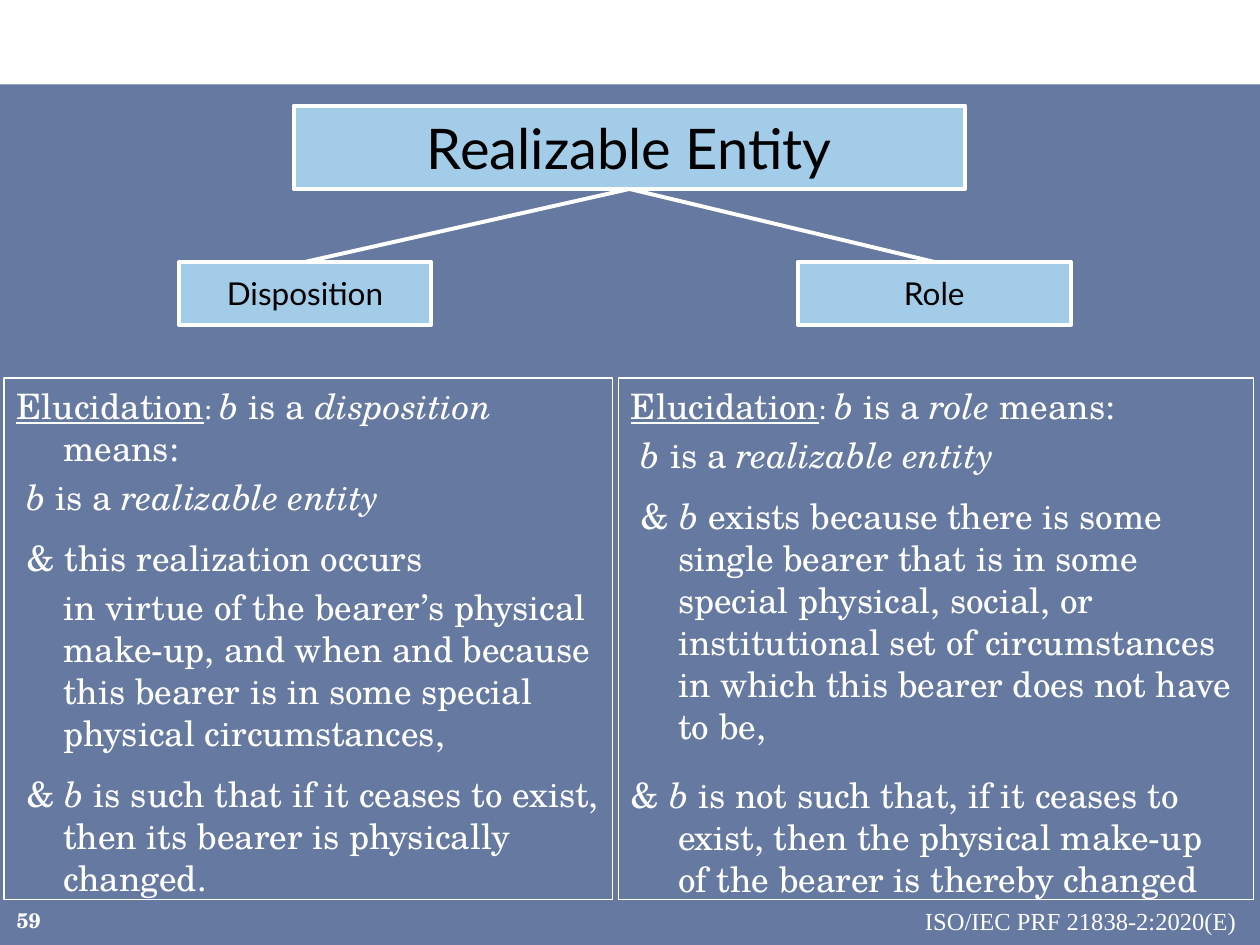
from dataclasses import dataclass

from lxml import etree
from pptx import Presentation
from pptx.dml.color import RGBColor
from pptx.enum.shapes import MSO_CONNECTOR, MSO_SHAPE
from pptx.enum.text import MSO_ANCHOR, PP_ALIGN
from pptx.oxml.ns import qn
from pptx.util import Cm, Pt

RECTANGLE = MSO_SHAPE.RECTANGLE
STRAIGHT = MSO_CONNECTOR.STRAIGHT
LEFT, CENTER, RIGHT = PP_ALIGN.LEFT, PP_ALIGN.CENTER, PP_ALIGN.RIGHT
TOP, MIDDLE = MSO_ANCHOR.TOP, MSO_ANCHOR.MIDDLE


@dataclass(frozen=True)
class Theme:
    white: RGBColor = RGBColor(0xFF, 0xFF, 0xFF)
    black: RGBColor = RGBColor(0, 0, 0)
    backdrop: RGBColor = RGBColor(0x66, 0x79, 0xA0)
    node: RGBColor = RGBColor(0xA2, 0xCC, 0xE8)
    node_font: str = "Lato"
    body_font: str = "TeX Gyre Schola"
    footer_font: str = "Times New Roman"
    root_size: int = 32
    body_size: int = 20
    child_size: int = 18
    footer_size: int = 14
    number_size: int = 12
    thick: float = 2.25
    thin: float = 0.75


THEME = Theme()


@dataclass(frozen=True)
class Box:
    """Position and size in centimetres."""
    left: float
    top: float
    width: float
    height: float

    @property
    def center(self) -> float:
        return self.left + self.width / 2

    def lengths(self) -> tuple:
        return Cm(self.left), Cm(self.top), Cm(self.width), Cm(self.height)


@dataclass(frozen=True)
class Node:
    label: str
    box: Box
    size: int


@dataclass(frozen=True)
class Piece:
    text: str
    italic: bool = False
    underline: bool = False
    small_caps: bool = False


@dataclass(frozen=True)
class Clause:
    pieces: tuple
    first_line: float = -0.75  # first-line indent, cm
    before: float = 4          # points


HANGING = 0.95
CLAUSE_GAP = 11
B = Piece("b", italic=True)
REALIZABLE = Clause((B, Piece(" is a "), Piece("realizable entity", italic=True)))


def opening(term: str) -> Clause:
    return Clause((Piece("Elucidation", underline=True), Piece(": ", small_caps=True), B,
                   Piece(" is a "), Piece(term, italic=True), Piece(" means:")),
                  -HANGING, 0)


# Content
ROOT = Node("Realizable Entity", Box(5.92, 2.13, 13.54, 1.68), THEME.root_size)
CHILDREN = (
    Node("Disposition", Box(3.61, 5.28, 5.08, 1.27), THEME.child_size),
    Node("Role", Box(16.08, 5.28, 5.51, 1.27), THEME.child_size),
)
PANELS = (
    (Box(0.08, 7.62, 12.27, 10.52), (
        opening("disposition"),
        REALIZABLE,
        Clause((Piece("& this realization occurs"),), before=CLAUSE_GAP),
        Clause((Piece("in virtue of the bearer’s physical make-up, and when and because "
                      "this bearer is in some special physical circumstances,"),), 0),
        Clause((Piece("& "), B, Piece(" is such that if it ceases to exist, then its "
                                      "bearer is physically changed.")), before=CLAUSE_GAP),
    )),
    (Box(12.47, 7.62, 12.8, 10.52), (
        opening("role"),
        REALIZABLE,
        Clause((Piece("& "), B, Piece(" exists because there is some single bearer that is in "
                                      "some special physical, social, or institutional set of "
                                      "circumstances in which this bearer does not have to be,")),
               before=CLAUSE_GAP),
        Clause((Piece("& "), B, Piece(" is not such that, if it ceases to exist, then the physical "
                                      "make-up of the bearer is thereby changed")),
               -HANGING, 15.5),
    )),
)


def add_rectangle(slide, box: Box, fill=None, line_width: float = 0):
    shape = slide.shapes.add_shape(RECTANGLE, *box.lengths())
    shape.shadow.inherit = False
    if fill is None:
        shape.fill.background()
    else:
        shape.fill.solid()
        shape.fill.fore_color.rgb = fill
    if line_width:
        shape.line.color.rgb = THEME.white
        shape.line.width = Pt(line_width)
    else:
        shape.line.fill.background()
    return shape


def add_run(paragraph, text: str, font: str, size: int, color: RGBColor):
    run = paragraph.add_run()
    run.text = text
    run.font.name = font
    run.font.size = Pt(size)
    run.font.color.rgb = color
    return run


def add_node(slide, node: Node) -> None:
    shape = add_rectangle(slide, node.box, THEME.node, THEME.thick)
    frame = shape.text_frame
    frame.word_wrap = False
    frame.vertical_anchor = MIDDLE
    paragraph = frame.paragraphs[0]
    paragraph.alignment = CENTER
    add_run(paragraph, node.label, THEME.node_font, node.size, THEME.black)


def add_branch(slide, parent: Box, child: Box) -> None:
    line = slide.shapes.add_connector(STRAIGHT, Cm(parent.center), Cm(parent.top + parent.height),
                                      Cm(child.center), Cm(child.top))
    line.line.color.rgb = THEME.white
    line.line.width = Pt(THEME.thick)
    etree.SubElement(line._element.spPr, qn("a:effectLst"))


def add_panel(slide, box: Box, clauses: tuple) -> None:
    frame = add_rectangle(slide, box, line_width=THEME.thin).text_frame
    frame.word_wrap = True
    frame.vertical_anchor = TOP
    for index, clause in enumerate(clauses):
        paragraph = frame.add_paragraph() if index else frame.paragraphs[0]
        paragraph.alignment = LEFT
        paragraph.space_before = Pt(clause.before)
        properties = paragraph._p.get_or_add_pPr()
        properties.set("marL", str(Cm(HANGING)))
        properties.set("indent", str(Cm(clause.first_line)))
        for piece in clause.pieces:
            run = add_run(paragraph, piece.text, THEME.body_font, THEME.body_size, THEME.white)
            run.font.italic = piece.italic
            run.font.underline = piece.underline
            if piece.small_caps:
                run._r.get_or_add_rPr().set("cap", "small")


def add_footer(slide, box: Box, text: str, font: str, size: int, anchor, inset: float):
    frame = slide.shapes.add_textbox(*box.lengths()).text_frame
    frame.word_wrap = True
    frame.vertical_anchor = anchor
    frame.margin_right = Cm(inset)
    paragraph = frame.paragraphs[0]
    paragraph.alignment = RIGHT
    return add_run(paragraph, text, font, size, THEME.white)


def main() -> None:
    presentation = Presentation()
    presentation.slide_width, presentation.slide_height = Cm(25.4), Cm(19.05)
    slide = presentation.slides.add_slide(presentation.slide_layouts[6])

    # Backdrop
    add_rectangle(slide, Box(0, 1.7, 25.4, 17.35), THEME.backdrop)

    # Hierarchy
    for node in (ROOT, *CHILDREN):
        add_node(slide, node)
    for child in CHILDREN:
        add_branch(slide, ROOT.box, child.box)

    # Elucidations
    for box, clauses in PANELS:
        add_panel(slide, box, clauses)

    # Footer
    number = add_footer(slide, Box(-0.2, 18.03, 1.27, 1.02), "59", THEME.body_font,
                        THEME.number_size, MIDDLE, 0.25)
    number.font.bold = True
    add_footer(slide, Box(18.34, 18.14, 6.96, 0.86), "ISO/IEC PRF 21838-2:2020(E)",
               THEME.footer_font, THEME.footer_size, TOP, 0.38)

    presentation.save("out.pptx")


if __name__ == "__main__":
    main()
